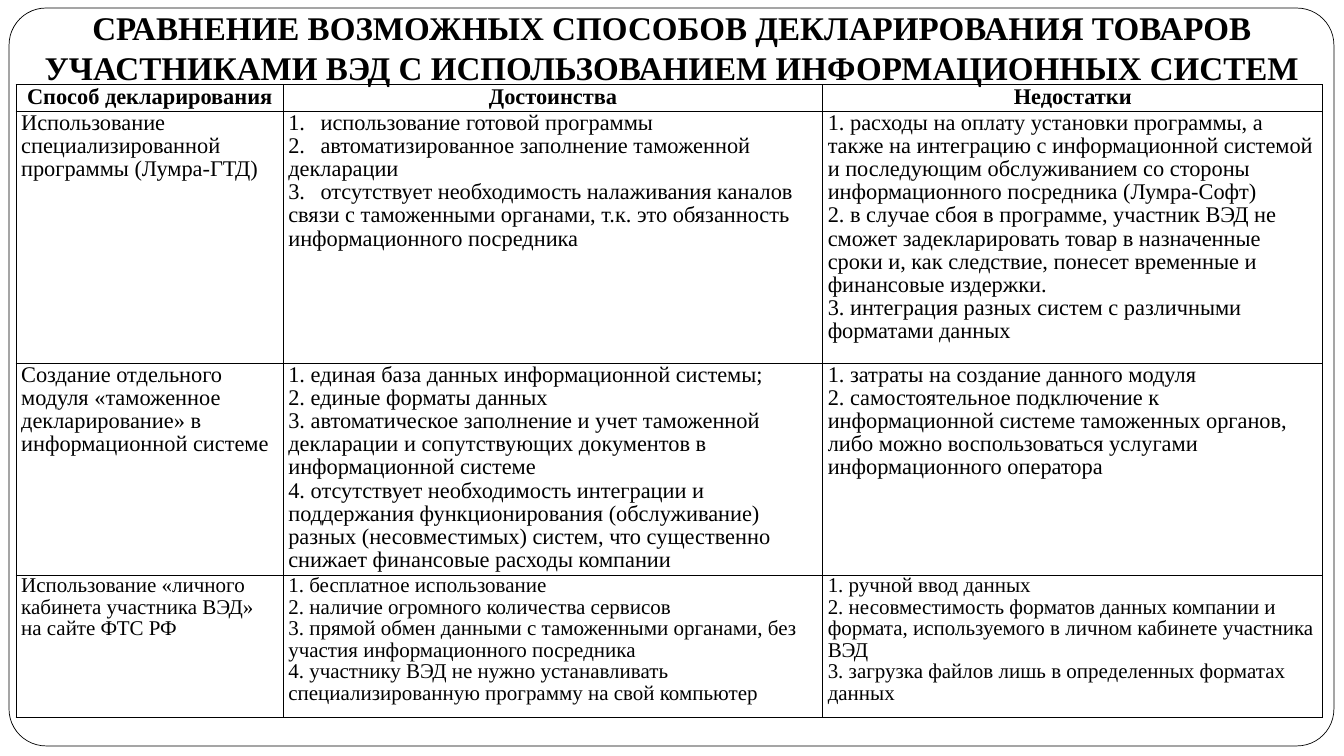
from pptx import Presentation
from pptx.dml.color import RGBColor
from pptx.enum.shapes import MSO_SHAPE as Shape
from pptx.enum.text import MSO_ANCHOR as Anchor, PP_ALIGN as Align
from pptx.oxml import parse_xml
from pptx.oxml.ns import nsdecls
from pptx.util import Inches, Pt

BLACK = RGBColor(0, 0, 0)
WHITE = RGBColor(255, 255, 255)
FACE = "Times New Roman"
TITLE = ("СРАВНЕНИЕ ВОЗМОЖНЫХ СПОСОБОВ ДЕКЛАРИРОВАНИЯ ТОВАРОВ "
         "УЧАСТНИКАМИ ВЭД С ИСПОЛЬЗОВАНИЕМ ИНФОРМАЦИОННЫХ СИСТЕМ")
COLS = [2.65, 5.35, 4.96]
HIGHS = [0.27, 2.5, 2.1, 1.41]
SIZES = [16, 16, 16, 15]

# Each cell is a list of paragraphs
ROWS = [
    [["Способ декларирования"], ["Достоинства"], ["Недостатки"]],
    [["Использование специализированной программы (Лумра-ГТД)"],
     ["1.\tиспользование готовой программы",
      "2.\tавтоматизированное заполнение таможенной декларации",
      "3.\tотсутствует необходимость налаживания каналов связи с таможенными "
      "органами, т.к. это обязанность информационного посредника"],
     ["1. расходы на оплату установки программы, а также на интеграцию с "
      "информационной системой и последующим обслуживанием со стороны "
      "информационного посредника (Лумра-Софт)",
      "2. в случае сбоя в программе, участник ВЭД не сможет задекларировать товар "
      "в назначенные сроки и, как следствие, понесет временные и финансовые издержки.",
      "3. интеграция разных систем с различными форматами данных"]],
    [["Создание отдельного модуля «таможенное декларирование» в информационной системе"],
     ["1. единая база данных информационной системы;",
      "2. единые форматы данных",
      "3. автоматическое заполнение и учет таможенной декларации и сопутствующих "
      "документов в информационной системе",
      "4. отсутствует необходимость интеграции и поддержания функционирования "
      "(обслуживание) разных (несовместимых) систем, что существенно снижает "
      "финансовые расходы компании"],
     ["1. затраты на создание данного модуля",
      "2. самостоятельное подключение к информационной системе таможенных органов,",
      "либо можно воспользоваться услугами информационного оператора"]],
    [["Использование «личного кабинета участника ВЭД» на сайте ФТС РФ"],
     ["1. бесплатное использование",
      "2. наличие огромного количества сервисов",
      "3. прямой обмен данными с таможенными органами, без участия "
      "информационного посредника",
      "4. участнику ВЭД не нужно устанавливать специализированную программу "
      "на свой компьютер"],
     ["1. ручной ввод данных",
      "2. несовместимость форматов данных компании и формата, используемого "
      "в личном кабинете участника ВЭД",
      "3. загрузка файлов лишь в определенных форматах данных"]],
]


def put(para, text, size, bold):
    run = para.add_run()
    run.text = text
    look = {"name": FACE, "size": Pt(size), "bold": bold}
    for key, val in look.items():
        setattr(run.font, key, val)
    run.font.color.rgb = BLACK


def edge(cell):
    for side in "LRTB":
        cell._tc.get_or_add_tcPr().append(parse_xml(
            f'<a:ln{side} {nsdecls("a")} w="12700"><a:solidFill>'
            f'<a:srgbClr val="{BLACK}"/></a:solidFill></a:ln{side}>'))


deck = Presentation()
deck.slide_width, deck.slide_height = Inches(13.33), Inches(7.5)
slide = deck.slides.add_slide(deck.slide_layouts[6])

# Rounded frame
frame = slide.shapes.add_shape(
    Shape.ROUNDED_RECTANGLE, Inches(0.09), Inches(0.08), Inches(13.14), Inches(7.32))
frame.adjustments[0] = 0.05
frame.shadow.inherit = False
frame.fill.solid()
frame.fill.fore_color.rgb = WHITE
frame.line.color.rgb = BLACK
frame.line.width = Pt(0.5)

# Comparison table
table = slide.shapes.add_table(
    len(ROWS), len(COLS), Inches(0.16), Inches(0.84),
    Inches(sum(COLS)), Inches(sum(HIGHS))).table
table.horz_banding = False
for col, wide in zip(table.columns, COLS):
    col.width = Inches(wide)
for i, (row, high, size) in enumerate(zip(ROWS, HIGHS, SIZES)):
    table.rows[i].height = Inches(high)
    head = i == 0
    for j, lines in enumerate(row):
        cell = table.cell(i, j)
        pads = {"margin_left": 0.05, "margin_right": 0.05,
                "margin_top": 0, "margin_bottom": 0}
        for key, val in pads.items():
            setattr(cell, key, Inches(val))
        edge(cell)
        cell.fill.background()
        frame = cell.text_frame
        for n, line in enumerate(lines):
            para = frame.add_paragraph() if n else frame.paragraphs[0]
            para.alignment = Align.CENTER if head else Align.LEFT
            para.line_spacing = 1.0 if head else 0.93
            if "\t" in line:
                para._p.get_or_add_pPr().append(parse_xml(
                    f'<a:tabLst {nsdecls("a")}>'
                    f'<a:tab pos="{Inches(0.32)}" algn="l"/></a:tabLst>'))
            put(para, line, size, head)

# Title
title = slide.shapes.add_textbox(0, 0, Inches(13.33), Inches(0.94)).text_frame
title.word_wrap = True
title.vertical_anchor = Anchor.MIDDLE
title.paragraphs[0].alignment = Align.CENTER
put(title.paragraphs[0], TITLE, 23.6, True)

deck.save("out.pptx")
